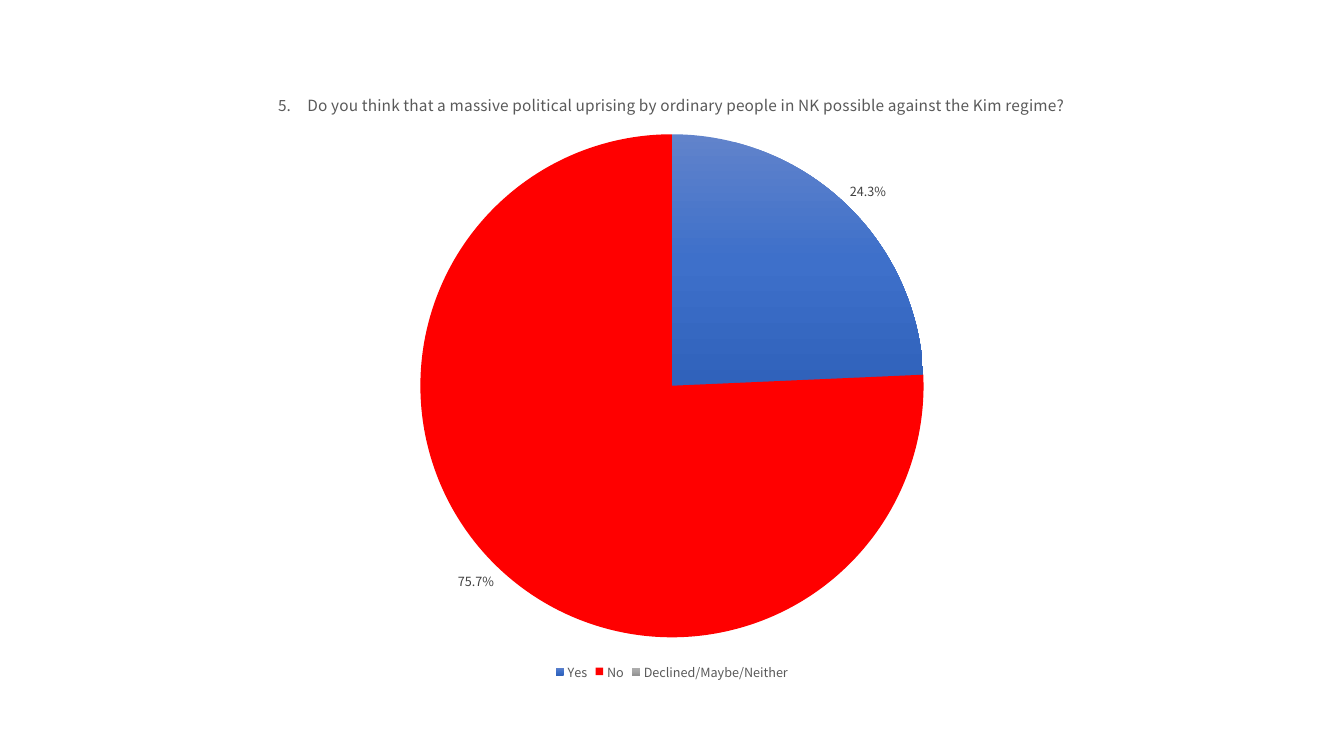
from copy import deepcopy

from lxml import etree
from pptx import Presentation
from pptx.chart.data import CategoryChartData
from pptx.dml.color import RGBColor
from pptx.enum.chart import XL_CHART_TYPE, XL_LABEL_POSITION, XL_LEGEND_POSITION
from pptx.oxml.ns import qn
from pptx.util import Inches, Pt

PIE = XL_CHART_TYPE.PIE
OUTSIDE_END = XL_LABEL_POSITION.OUTSIDE_END
BOTTOM = XL_LEGEND_POSITION.BOTTOM

FONT = "Noto Sans CJK KR"
COLORS = {
    "text": "595959",
    "label": "404040",
    "no": "FF0000",
    "yes": ("6183CB", "3E70CA", "3062BB"),
    "other": ("AFAFAF", "A5A5A5", "939393"),
}
NUMBER = "5."
QUESTION = ("Do you think that a massive political uprising by ordinary people "
            "in NK possible against the Kim regime?")
ANSWERS = {"Yes": 0.243, "No": 0.757, "Declined/Maybe/Neither": 0}


class SurveySlide:
    """Holds the style and the current slide of a survey question."""

    def __init__(self, slide, font):
        self.slide = slide
        self.font = font

    def style(self, font, size, color):
        font.name = self.font
        font.size = Pt(size)
        font.bold = False
        font.color.rgb = RGBColor.from_string(COLORS[color])

    def pie(self, name, answers, left, top, width, height):
        data = CategoryChartData(number_format="0.0%")
        data.categories = list(answers)
        data.add_series(name, list(answers.values()))
        frame = self.slide.shapes.add_chart(
            PIE, Inches(left), Inches(top), Inches(width), Inches(height), data)
        chart = frame.chart
        chart.font.name = self.font
        chart.font.size = Pt(10)
        chart.plots[0].vary_by_categories = True
        return chart

    def title(self, chart, number, question):
        chart.has_title = True
        para = chart.chart_title.text_frame.paragraphs[0]
        for text in (number, " ", question):
            span = para.add_run()
            span.text = text
            self.style(span.font, 11, "text")
        gap = para.runs[1].font
        gap._element.set("spc", "900")
        chart.chart_title.include_in_layout = False

    def legend(self, chart):
        chart.has_legend = True
        chart.legend.position = BOTTOM
        chart.legend.include_in_layout = False
        self.style(chart.legend.font, 9, "text")

    def slices(self, series, names):
        for index, name in enumerate(names):
            fill = series.points[index].format.fill
            color = COLORS[name]
            if isinstance(color, str):
                fill.solid()
                fill.fore_color.rgb = RGBColor.from_string(color)
            else:
                self.gradient(series, fill, color)

    def gradient(self, series, fill, colors):
        fill.gradient()
        fill.gradient_angle = 270
        stop_list = series._element.xpath(".//a:gsLst")[-1]
        stop_list.insert(1, deepcopy(stop_list[0]))
        for index, (stop, color) in enumerate(zip(fill.gradient_stops, colors)):
            stop.position = index / (len(colors) - 1)
            stop.color.rgb = RGBColor.from_string(color)

    def labels(self, series, empty_index):
        labels = series.data_labels
        labels.show_value = True
        labels.number_format = "0.0%"
        labels.number_format_is_linked = False
        labels.position = OUTSIDE_END
        self.style(labels.font, 9, "label")
        label = etree.Element(qn("c:dLbl"))
        etree.SubElement(label, qn("c:idx")).set("val", str(empty_index))
        etree.SubElement(label, qn("c:delete")).set("val", "1")
        labels._element.insert(0, label)


def main():
    deck = Presentation()
    deck.slide_width = Inches(13.33)
    deck.slide_height = Inches(7.5)
    page = SurveySlide(deck.slides.add_slide(deck.slide_layouts[6]), FONT)

    chart = page.pie(f"{NUMBER} {QUESTION}", ANSWERS, 0.7, 0.7, 11.93, 6.09)
    page.title(chart, NUMBER, QUESTION)
    page.legend(chart)
    series = chart.plots[0].series[0]
    page.slices(series, ("yes", "no", "other"))
    page.labels(series, empty_index=2)

    deck.save("out.pptx")


if __name__ == "__main__":
    main()
